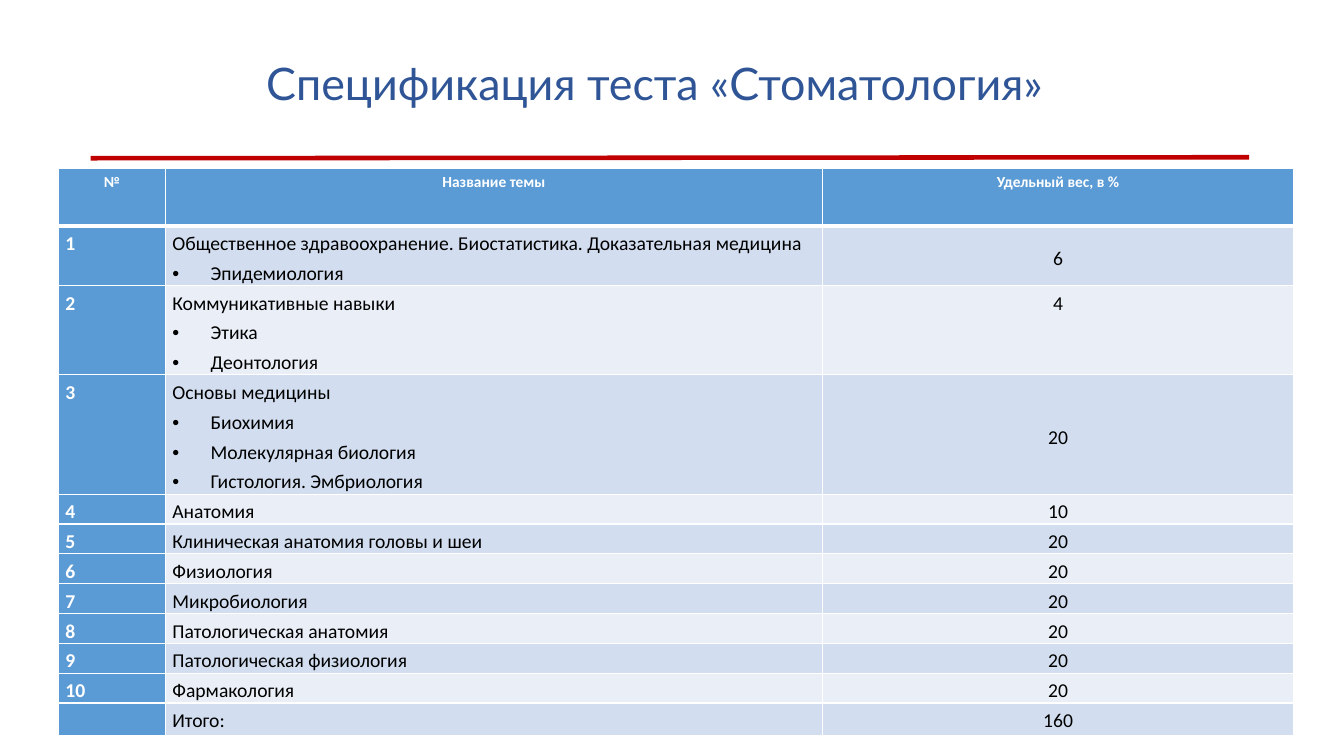
from lxml import etree
from pptx import Presentation
from pptx import util as u
from pptx.dml.color import RGBColor
from pptx.enum import shapes, text
from pptx.oxml import ns

COLORS = {
    "title": "2F5597",
    "rule": "C00000",
    "header": "5B9BD5",
    "odd": "D2DEEF",
    "even": "EAEFF7",
    "white": "FFFFFF",
    "black": "000000",
}
LEFT, CENTER, JUSTIFY = text.PP_ALIGN.LEFT, text.PP_ALIGN.CENTER, text.PP_ALIGN.JUSTIFY
TOP, MIDDLE = text.MSO_ANCHOR.TOP, text.MSO_ANCHOR.MIDDLE

HEADINGS = ["№", "Название темы", "Удельный вес, в %"]
COLUMN_WIDTHS = [1.06, 6.52, 4.67]
HEADER_HEIGHT, LINE_HEIGHT, TOTAL_HEIGHT = 0.57, 0.29, 0.32
TOPICS = [
    (["Общественное здравоохранение. Биостатистика. Доказательная медицина",
      "Эпидемиология"], 6, MIDDLE),
    (["Коммуникативные навыки", "Этика", "Деонтология"], 4, TOP),
    (["Основы медицины", "Биохимия", "Молекулярная биология",
      "Гистология. Эмбриология"], 20, MIDDLE),
    (["Анатомия"], 10, MIDDLE),
    (["Клиническая анатомия головы и шеи"], 20, MIDDLE),
    (["Физиология"], 20, MIDDLE),
    (["Микробиология"], 20, MIDDLE),
    (["Патологическая анатомия"], 20, TOP),
    (["Патологическая физиология"], 20, TOP),
    (["Фармакология"], 20, TOP),
]


def rgb(name):
    return RGBColor.from_string(COLORS[name])


def add_run(paragraph, words, size, color, font="Calibri", bold=False):
    run = paragraph.add_run()
    run.text = words
    run.font.name = font
    run.font.size = u.Pt(size)
    run.font.bold = bold
    run.font.color.rgb = rgb(color)


def add_bullet(paragraph):
    props = paragraph._p.get_or_add_pPr()
    props.set("marL", str(u.Inches(0.38)))
    props.set("indent", str(-u.Inches(0.38)))
    etree.SubElement(props, ns.qn("a:buFont")).set("typeface", "Arial")
    etree.SubElement(props, ns.qn("a:buChar")).set("char", "•")


def add_borders(cell, top, bottom):
    props = cell._tc.get_or_add_tcPr()
    for side, width in zip("LRTB", (1, 1, top, bottom)):
        border = etree.SubElement(props, ns.qn("a:ln" + side), w=str(u.Pt(width)))
        fill = etree.SubElement(border, ns.qn("a:solidFill"))
        etree.SubElement(fill, ns.qn("a:srgbClr")).set("val", COLORS["white"])


def fill_cell(cell, lines, fill, align, color="black", size=14, bold=False,
              anchor=TOP, top=1, bottom=1):
    cell.margin_left = cell.margin_right = u.Inches(0.07)
    cell.margin_top = cell.margin_bottom = 0
    cell.vertical_anchor = anchor
    add_borders(cell, top, bottom)
    cell.fill.solid()
    cell.fill.fore_color.rgb = rgb(fill)
    for index, words in enumerate(lines):
        frame = cell.text_frame
        paragraph = frame.add_paragraph() if index else frame.paragraphs[0]
        paragraph.alignment = align
        paragraph.line_spacing = 1.25
        if index:
            add_bullet(paragraph)
        add_run(paragraph, words, size, color, bold=bold)


def add_title(slide, words):
    title = slide.shapes.title
    title.left, title.top = u.Inches(0.58), u.Inches(0.4)
    title.width, title.height = u.Inches(11.83), u.Inches(1.45)
    frame = title.text_frame
    frame.word_wrap = True
    frame.vertical_anchor = MIDDLE
    frame.margin_bottom = u.Inches(0.6)
    heading = frame.paragraphs[0]
    heading.alignment = CENTER
    heading.line_spacing = 0.9
    add_run(heading, words, 32, "title", font="Lato")


def add_rule(slide):
    rule = slide.shapes.add_connector(
        shapes.MSO_CONNECTOR.STRAIGHT,
        u.Inches(0.9), u.Inches(1.57), u.Inches(12.39), u.Inches(1.56))
    rule.line.color.rgb = rgb("rule")
    rule.line.width = u.Pt(3.25)
    etree.SubElement(rule._element.spPr, ns.qn("a:effectLst"))


def add_specification(slide):
    total = sum(weight for _, weight, _ in TOPICS)
    entries = [([str(number)], *topic) for number, topic in enumerate(TOPICS, 1)]
    entries.append(([], ["Итого:"], total, TOP))
    heights = [HEADER_HEIGHT]
    heights += [LINE_HEIGHT * len(lines) for lines, _, _ in TOPICS]
    heights.append(TOTAL_HEIGHT)

    specification = slide.shapes.add_table(
        len(heights), len(HEADINGS), u.Inches(0.58), u.Inches(1.67),
        u.Inches(sum(COLUMN_WIDTHS)), u.Inches(sum(heights))).table
    for column, width in zip(specification.columns, COLUMN_WIDTHS):
        column.width = u.Inches(width)
    for row, height in zip(specification.rows, heights):
        row.height = u.Inches(height)

    for column, heading in enumerate(HEADINGS):
        fill_cell(specification.cell(0, column), [heading], "header", CENTER,
                  color="white", size=11, bold=True, bottom=3)
    for row, (number, lines, weight, anchor) in enumerate(entries, 1):
        band = "odd" if row % 2 else "even"
        top = 3 if row == 1 else 1
        fill_cell(specification.cell(row, 0), number, "header", JUSTIFY,
                  color="white", bold=True, top=top)
        fill_cell(specification.cell(row, 1), lines, band, LEFT, top=top)
        fill_cell(specification.cell(row, 2), [str(weight)], band, CENTER,
                  anchor=anchor, top=top)


def main():
    deck = Presentation()
    deck.slide_width, deck.slide_height = u.Inches(13.33), u.Inches(7.5)
    slide = deck.slides.add_slide(deck.slide_layouts[5])
    add_title(slide, "Спецификация теста «Стоматология»")
    add_rule(slide)
    add_specification(slide)
    deck.save("out.pptx")


if __name__ == "__main__":
    main()
